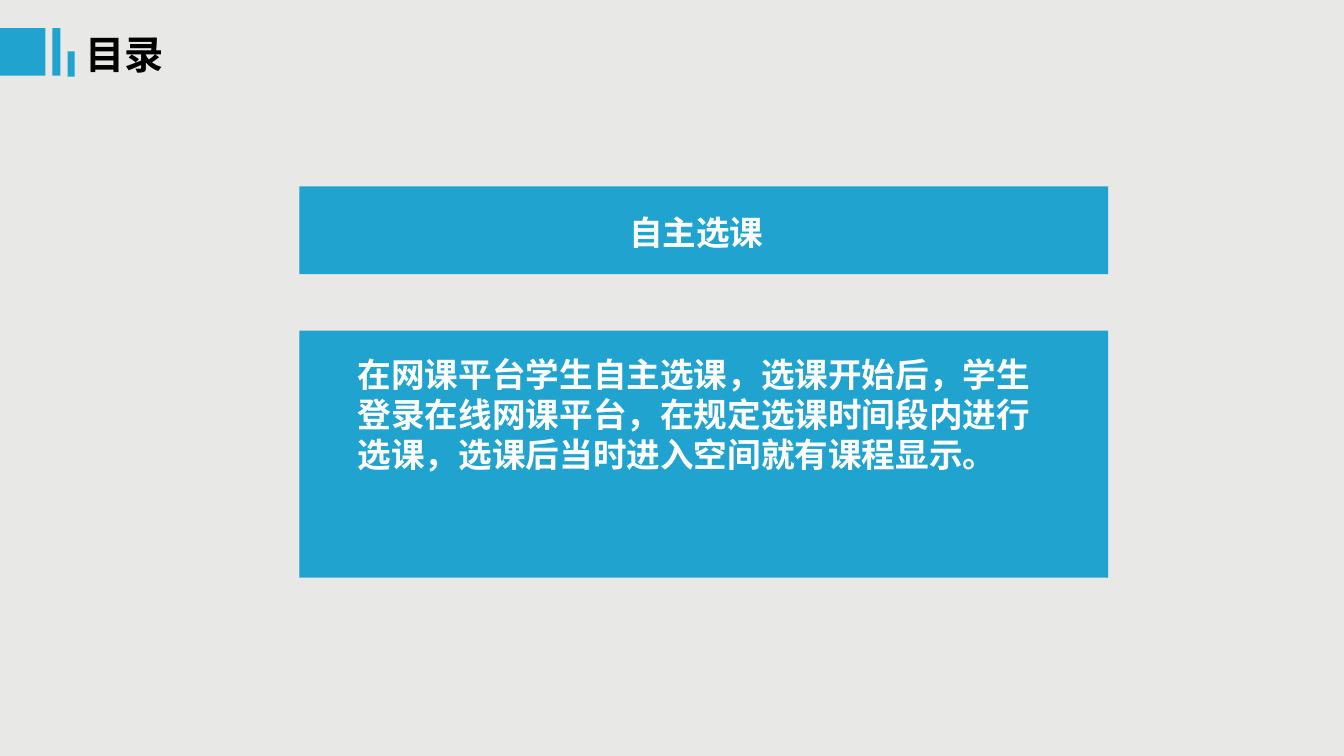
"""Build the contents slide on choosing courses."""
from lxml import etree
from pptx import Presentation
from pptx.dml.color import RGBColor
from pptx.enum.shapes import MSO_SHAPE
from pptx.enum.text import MSO_ANCHOR, PP_ALIGN
from pptx.oxml.ns import qn
from pptx.util import Inches, Pt

RECTANGLE = MSO_SHAPE.RECTANGLE
TOP = MSO_ANCHOR.TOP
LEFT = PP_ALIGN.LEFT

FONT = "Noto Sans CJK SC"
BLUE, WHITE, BLACK, GRAY = "21A3D0", "FFFFFF", "000000", "E8E8E6"

TITLE = ("目录", (0.75, 0.25, 1.27, 0.57))
TITLE_BARS = [
    (0, 0.28, 0.45, 0.47),
    (0.52, 0.28, 0.08, 0.47),
    (0.67, 0.51, 0.07, 0.25),
]
PANEL_LEFT, PANEL_WIDTH = 2.97, 8.02
PANELS = [
    (1.85, 0.87, "自主选课", (6.14, 2.05, 1.81, 0.5)),
    (3.28, 2.45,
     "在网课平台学生自主选课，选课开始后，学生登录在线网课平台，"
     "在规定选课时间段内进行选课，选课后当时进入空间就有课程显示。",
     (3.45, 3.46, 7.18, 1.31)),
]


def color(value):
    return RGBColor.from_string(value)


def add_block(slide, box):
    shape = slide.shapes.add_shape(RECTANGLE, *map(Inches, box))
    shape.shadow.inherit = False
    shape.fill.solid()
    shape.fill.fore_color.rgb = color(BLUE)
    shape.line.fill.background()


def write_text(shape, text, size, text_color):
    frame = shape.text_frame
    frame.word_wrap = True
    frame.vertical_anchor = TOP
    paragraph = frame.paragraphs[0]
    paragraph.alignment = LEFT
    run = paragraph.add_run()
    run.text = text
    run.font.size = Pt(size)
    run.font.bold = True
    run.font.color.rgb = color(text_color)
    run.font.name = FONT
    etree.SubElement(run.font._element, qn("a:ea"), typeface=FONT)


def main():
    presentation = Presentation()
    presentation.slide_width = Inches(13.33)
    presentation.slide_height = Inches(7.5)
    slide = presentation.slides.add_slide(presentation.slide_layouts[5])
    slide.background.fill.solid()
    slide.background.fill.fore_color.rgb = color(GRAY)

    for bar in TITLE_BARS:
        add_block(slide, bar)

    title_text, title_box = TITLE
    title = slide.shapes.title
    title.left, title.top, title.width, title.height = map(Inches, title_box)
    write_text(title, title_text, 28, BLACK)

    for top, height, text, text_box in PANELS:
        add_block(slide, (PANEL_LEFT, top, PANEL_WIDTH, height))
        label = slide.shapes.add_textbox(*map(Inches, text_box))
        write_text(label, text, 24, WHITE)

    presentation.save("out.pptx")


if __name__ == "__main__":
    main()
